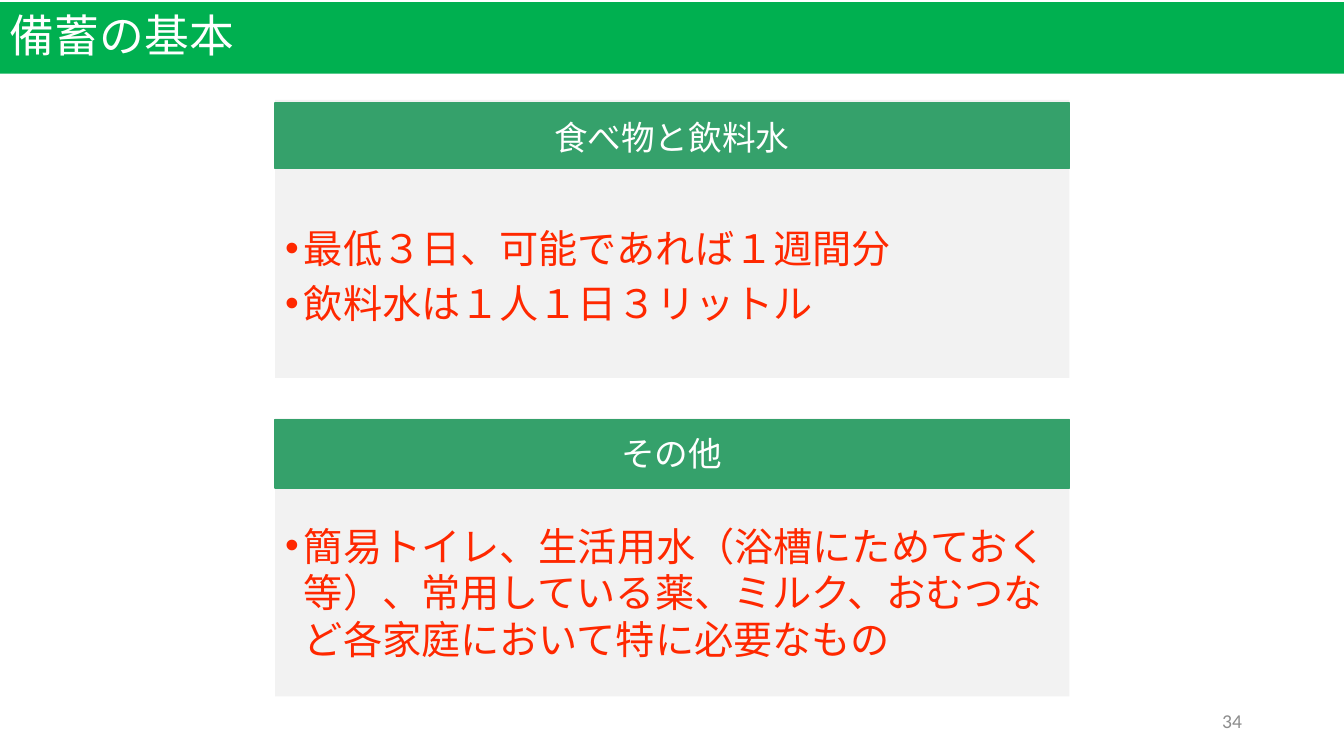
from dataclasses import dataclass

from lxml.etree import SubElement
from pptx import Presentation
from pptx.dml.color import RGBColor
from pptx.enum.shapes import MSO_SHAPE
from pptx.enum.text import MSO_ANCHOR, PP_ALIGN
from pptx.oxml.ns import qn
from pptx.shapes.autoshape import Shape
from pptx.slide import Slide
from pptx.util import Pt

COLORS = {
    "title": "00B050",
    "head": "35A16B",
    "panel": "F2F2F2",
    "body": "FF2800",
    "white": "FFFFFF",
    "page": "8C8C8C",
}
CJK = "Noto Sans CJK JP"
WIDTH, HEIGHT = 960, 540
LEFT, SPAN = 196.56, 567.36
INDENT = 13.5


@dataclass
class Box:
    left: float
    top: float
    width: float
    height: float


@dataclass
class Style:
    size: float
    color: str
    align: PP_ALIGN = PP_ALIGN.LEFT
    anchor: MSO_ANCHOR = MSO_ANCHOR.MIDDLE
    font: str = CJK
    pitch: float = 1.19
    bullet: bool = False


@dataclass
class Card:
    title: str
    items: list[str]
    panel: Box
    head: Box
    body: Box


TITLE = Style(32, "white", pitch=1.07)
HEAD = Style(24, "white", PP_ALIGN.CENTER, MSO_ANCHOR.TOP)
BODY = Style(28, "body", bullet=True)
PAGE = Style(14, "page", PP_ALIGN.RIGHT, font="Calibri", pitch=1.22)

CARDS = [
    Card(
        "食べ物と飲料水",
        ["最低３日、可能であれば１週間分", "飲料水は１人１日３リットル"],
        Box(LEFT, 71.28, SPAN, 198.72),
        Box(LEFT, 73.44, SPAN, 46.8),
        Box(LEFT, 120.96, SPAN, 151.92),
    ),
    Card(
        "その他",
        ["簡易トイレ、生活用水（浴槽にためておく等）、常用している薬、ミルク、おむつなど各家庭において特に必要なもの"],
        Box(LEFT, 298.8, SPAN, 198.72),
        Box(LEFT, 299.52, SPAN, 48.96),
        Box(LEFT, 348.48, SPAN, 149.04),
    ),
]


def paint(name: str) -> RGBColor:
    return RGBColor.from_string(COLORS[name])


def block(slide: Slide, box: Box, fill: str, edge: bool = False) -> Shape:
    shape = slide.shapes.add_shape(
        MSO_SHAPE.RECTANGLE, Pt(box.left), Pt(box.top), Pt(box.width), Pt(box.height)
    )
    shape.shadow.inherit = False
    shape.fill.solid()
    shape.fill.fore_color.rgb = paint(fill)
    if edge:
        shape.line.color.rgb = paint(fill)
        shape.line.width = Pt(1)
    else:
        shape.line.fill.background()
    return shape


def write(shape: Shape, lines: list[str], style: Style) -> None:
    frame = shape.text_frame
    frame.word_wrap = True
    frame.vertical_anchor = style.anchor
    frame.text = "\n".join(lines)
    for para in frame.paragraphs:
        para.alignment = style.align
        para.line_spacing = Pt(round(style.size * style.pitch, 1))
        if style.bullet:
            para.space_after = Pt(6)
            props = para._p.get_or_add_pPr()
            props.set("marL", str(Pt(INDENT)))
            props.set("indent", str(-Pt(INDENT)))
            SubElement(props, qn("a:buFont"), typeface="Arial")
            SubElement(props, qn("a:buChar"), char="•")
        for run in para.runs:
            run.font.size = Pt(style.size)
            run.font.color.rgb = paint(style.color)
            run.font.name = style.font
            SubElement(run._r.get_or_add_rPr(), qn("a:ea"), typeface=style.font)


def label(slide: Slide, box: Box, lines: list[str], style: Style) -> None:
    shape = slide.shapes.add_textbox(
        Pt(box.left), Pt(box.top), Pt(box.width), Pt(box.height)
    )
    write(shape, lines, style)


def draw(slide: Slide, card: Card) -> None:
    block(slide, card.panel, "panel")
    block(slide, card.head, "head", edge=True)
    label(slide, Box(354.96, card.head.top + 6.48, 249.84, 36), [card.title], HEAD)
    label(slide, card.body, card.items, BODY)


def main() -> None:
    deck = Presentation()
    deck.slide_width, deck.slide_height = Pt(WIDTH), Pt(HEIGHT)
    slide = deck.slides.add_slide(deck.slide_layouts[6])
    write(block(slide, Box(0, 1.44, WIDTH, 51.12), "title"), ["備蓄の基本"], TITLE)
    label(slide, Box(678.24, 500.4, 216, 28.8), ["34"], PAGE)
    for card in CARDS:
        draw(slide, card)
    deck.save("out.pptx")


if __name__ == "__main__":
    main()
